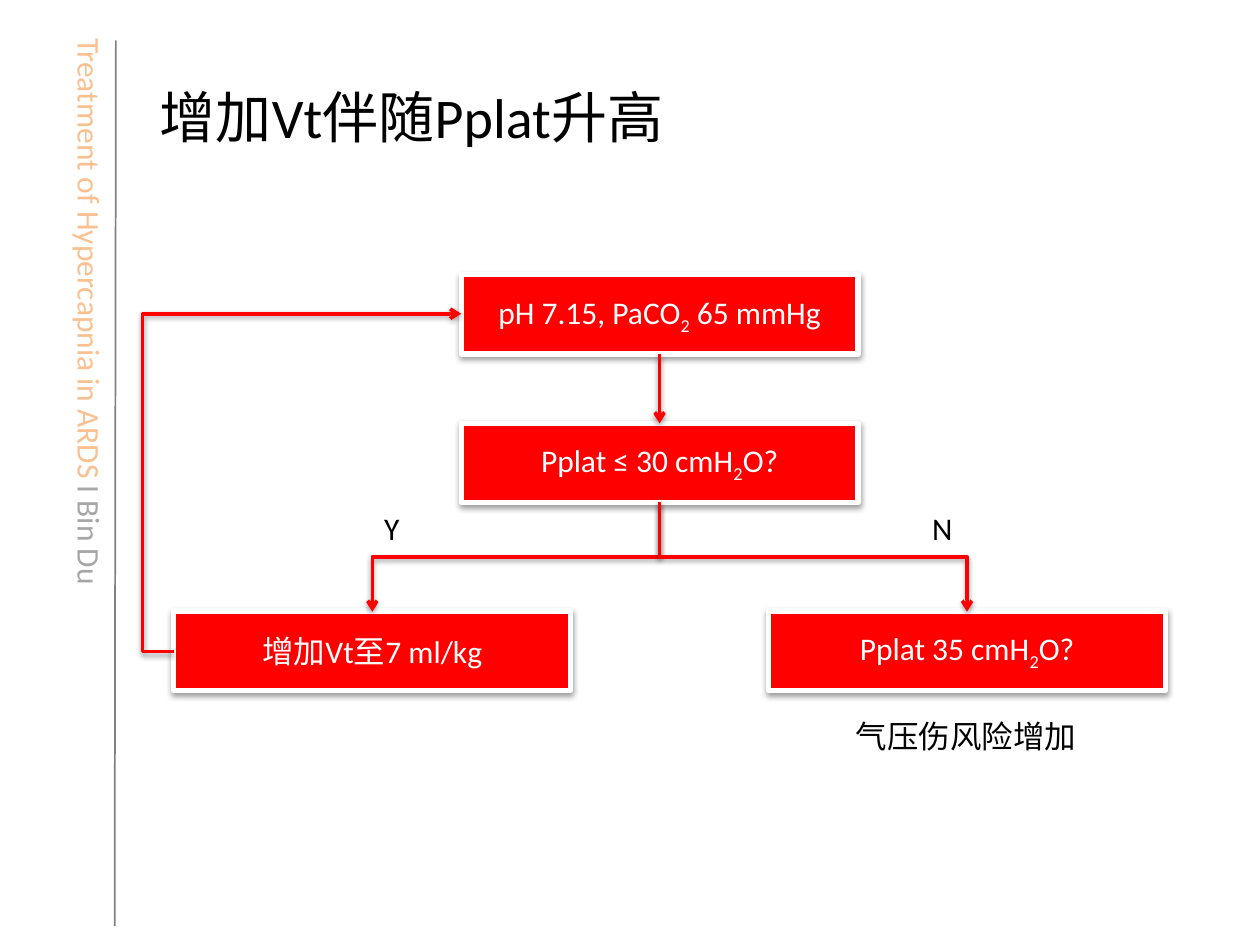
"""Build the slide on raising Vt while Pplat climbs."""
from lxml import etree
from pptx import Presentation
from pptx import util as u
from pptx.dml.color import RGBColor
from pptx.enum import shapes, text
from pptx.oxml import ns

prs = Presentation()
prs.slide_width, prs.slide_height = u.Inches(10), u.Inches(7.5)
COL, ROW = prs.slide_width / 100, prs.slide_height / 75
s = prs.slides.add_slide(prs.slide_layouts[6])
rgb = RGBColor.from_string
RED, WHITE, BLACK, GREY = "FF0000", "FFFFFF", "000000", "808080"
CENTER, LEFT = text.PP_ALIGN.CENTER, text.PP_ALIGN.LEFT


def write(sp, runs, size=18, font="Calibri", align=LEFT, **frame):
    tf = sp.text_frame
    for name, value in frame.items():
        setattr(tf, name, value)
    p = tf.paragraphs[0]
    p.alignment = align
    for words, color, base in runs:
        r = p.add_run()
        r.text = words
        for name, value in {"size": u.Pt(size), "name": font}.items():
            setattr(r.font, name, value)
        r.font.color.rgb = rgb(color)
        if base:
            r.font._element.set("baseline", str(base))


def shade(effects):
    shadow = etree.SubElement(effects, ns.qn("a:outerShdw"), blurRad="40000",
                              dist="20000", dir="5400000", rotWithShape="0")
    color = etree.SubElement(shadow, ns.qn("a:srgbClr"), val=BLACK)
    etree.SubElement(color, ns.qn("a:alpha"), val="38000")


rule = s.shapes.add_connector(shapes.MSO_CONNECTOR.STRAIGHT, int(9.2 * COL),
                              int(3.2 * ROW), int(9.1 * COL), int(73.5 * ROW))
rule.line.color.rgb, rule.line.width = rgb(GREY), u.Pt(1)
etree.SubElement(rule._element.spPr, ns.qn("a:effectLst"))

labels = [
    (-15.9, 23.1, 46.1, 4, 90, [("Treatment of Hypercapnia in ARDS ", "FAC090", 0),
                                ("Ι Bin Du", "A6A6A6", 0)], {}),
    (11.7, 3, 83.3, 12.5, 0, [("增加Vt伴随Pplat升高", BLACK, 0)],
     {"size": 32, "word_wrap": True, "vertical_anchor": text.MSO_ANCHOR.MIDDLE}),
    (29.5, 39.9, 3.3, 4, 0, [("Y", BLACK, 0)], {}),
    (73, 39.9, 3.6, 4, 0, [("N", BLACK, 0)], {}),
    (66.8, 56.4, 19.7, 4, 0, [("气压伤风险增加", BLACK, 0)],
     {"font": "Noto Sans CJK SC", "align": CENTER}),
]
for x, y, w, h, turn, runs, style in labels:
    sp = s.shapes.add_textbox(int(x * COL), int(y * ROW), int(w * COL), int(h * ROW))
    sp.rotation = turn
    write(sp, runs, **{"word_wrap": False, **style})

BOX_W, BOX_H = 31.5, 6.3
boxes = []
for x, y, words in [
    (36.6, 21.8, "pH 7.15, PaCO|2| 65 mmHg"),
    (36.6, 33.6, "Pplat ≤ 30 cmH|2|O?"),
    (13.8, 48.5, "增加Vt至7 ml/kg"),
    (61, 48.5, "Pplat 35 cmH|2|O?"),
]:
    sp = s.shapes.add_shape(shapes.MSO_SHAPE.RECTANGLE, int(x * COL), int(y * ROW),
                            int(BOX_W * COL), int(BOX_H * ROW))
    sp.fill.solid()
    sp.fill.fore_color.rgb = rgb(RED)
    sp.line.color.rgb, sp.line.width = rgb(WHITE), u.Pt(3)
    sp.shadow.inherit = False
    shade(sp._element.spPr.find(ns.qn("a:effectLst")))
    runs = [(part, WHITE, -25000 * (i % 2)) for i, part in enumerate(words.split("|"))]
    write(sp, runs, align=CENTER, word_wrap=True, vertical_anchor=text.MSO_ANCHOR.MIDDLE)
    boxes.append(sp)

STRAIGHT, ELBOW = shapes.MSO_CONNECTOR.STRAIGHT, shapes.MSO_CONNECTOR.ELBOW
arrows = [
    (STRAIGHT, 52.4, 28.1, 52.4, 33.6, 0, None),
    (ELBOW, 36.6, 32.8, 45.3, 55.6, 90, None),
    (ELBOW, 68.9, 32, 60.2, 56.4, 270, None),
    (ELBOW, 36.6, 24.9, 13.8, 51.7, 180, -10900),
]
for kind, x1, y1, x2, y2, turn, bend in arrows:
    c = s.shapes.add_connector(kind, int(x1 * COL), int(y1 * ROW),
                               int(x2 * COL), int(y2 * ROW))
    c.line.color.rgb, c.line.width = rgb(RED), u.Pt(2)
    pr = c._element.spPr
    etree.SubElement(pr.find(ns.qn("a:ln")), ns.qn("a:tailEnd"), type="arrow")
    shade(etree.SubElement(pr, ns.qn("a:effectLst")))
    if turn:
        pr.find(ns.qn("a:xfrm")).set("rot", str(turn * 60000))
    else:
        c.begin_connect(boxes[0], 2)
        c.end_connect(boxes[1], 0)
    if bend:
        guides = pr.find(ns.qn("a:prstGeom")).find(ns.qn("a:avLst"))
        etree.SubElement(guides, ns.qn("a:gd"), name="adj1", fmla=f"val {bend}")

prs.save("out.pptx")
